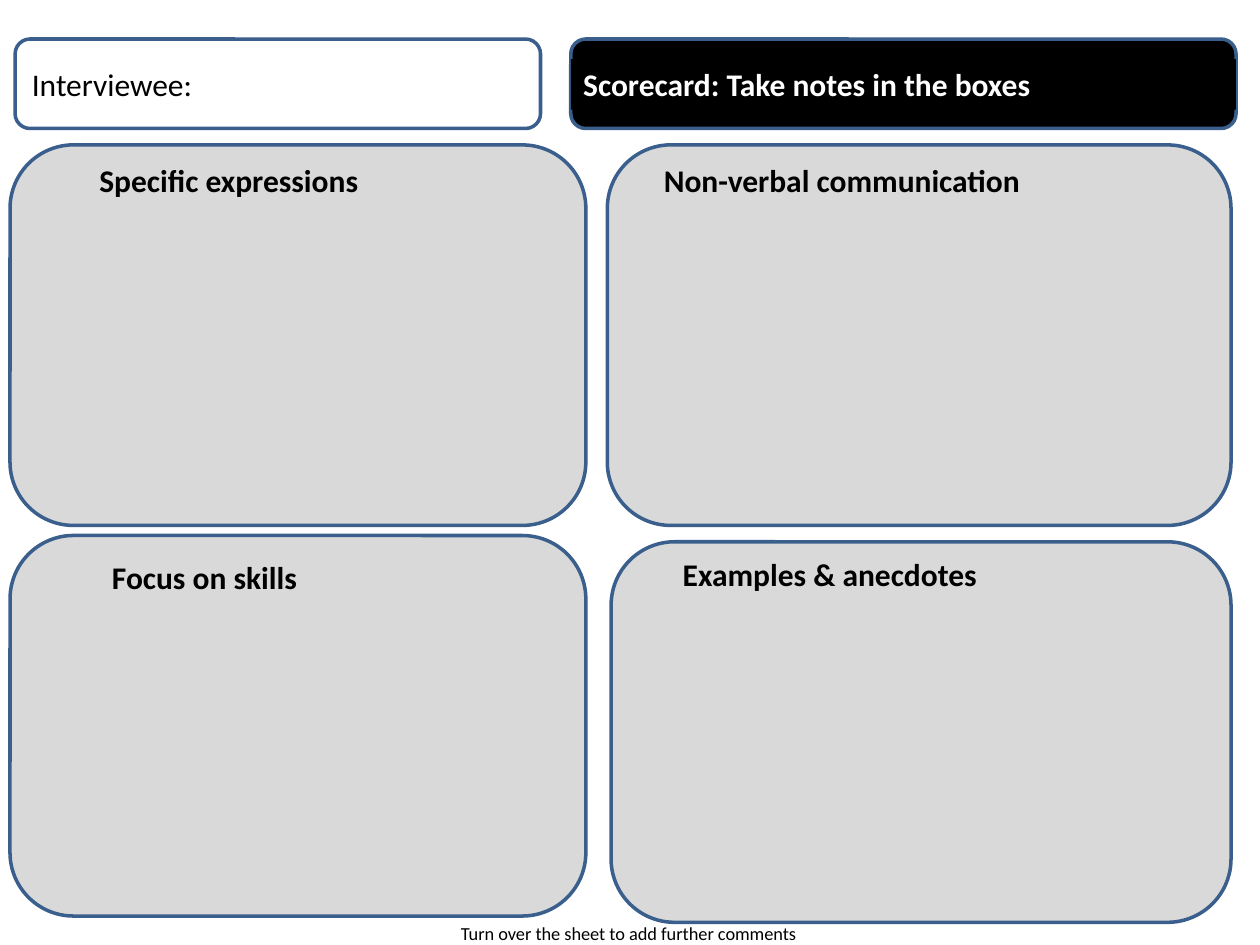
from dataclasses import dataclass

from pptx import Presentation
from pptx.dml.color import RGBColor
from pptx.enum.shapes import MSO_SHAPE
from pptx.enum.text import MSO_ANCHOR, PP_ALIGN
from pptx.util import Inches, Pt


@dataclass(frozen=True)
class Theme:
    """Colours, font and sizes of the scorecard."""
    font: str = "Calibri"
    ink: str = "000000"
    paper: str = "FFFFFF"
    panel: str = "D9D9D9"
    border: str = "3A5F8C"
    border_width: float = 2
    heading_size: float = 18
    footer_size: float = 10.5


THEME = Theme()

PANELS = (
    ("Specific expressions", (0.08, 1.15, 4.57, 3.02), (0.69, 1.23)),
    ("Focus on skills", (0.08, 4.25, 4.57, 3.02), (0.79, 4.38)),
    ("Non-verbal communication", (4.82, 1.15, 4.95, 3.02), (5.17, 1.23)),
    ("Examples & anecdotes", (4.85, 4.3, 4.92, 3.02), (5.32, 4.36)),
)


def write(holder, text, *, size=THEME.heading_size, color=THEME.ink, bold=False,
          anchor=MSO_ANCHOR.TOP):
    """Put left-aligned, formatted text into a shape or text box."""
    frame = holder.text_frame
    frame.word_wrap = True
    frame.vertical_anchor = anchor
    paragraph = frame.paragraphs[0]
    paragraph.alignment = PP_ALIGN.LEFT
    run = paragraph.add_run()
    run.text = text
    run.font.name = THEME.font
    run.font.size = Pt(size)
    run.font.bold = bold
    run.font.color.rgb = RGBColor.from_string(color)


def add_box(slide, bounds, *, fill=None, border=THEME.border,
            kind=MSO_SHAPE.ROUNDED_RECTANGLE):
    """Add a box with an optional fill and border."""
    box = slide.shapes.add_shape(kind, *map(Inches, bounds))
    box.shadow.inherit = False
    if fill:
        box.fill.solid()
        box.fill.fore_color.rgb = RGBColor.from_string(fill)
    else:
        box.fill.background()
    if border:
        box.line.color.rgb = RGBColor.from_string(border)
        box.line.width = Pt(THEME.border_width)
    else:
        box.line.fill.background()
    return box


def add_label(slide, bounds, text, **text_format):
    """Add a text box holding one line of text."""
    label = slide.shapes.add_textbox(*map(Inches, bounds))
    write(label, text, **text_format)


def main():
    """Build the interview scorecard."""
    deck = Presentation()
    deck.slide_width, deck.slide_height = Inches(10), Inches(7.5)
    slide = deck.slides.add_slide(deck.slide_layouts[6])

    interviewee = add_box(slide, (0.12, 0.31, 4.17, 0.71))
    write(interviewee, "Interviewee:", anchor=MSO_ANCHOR.MIDDLE)

    for _, bounds, _ in PANELS:
        add_box(slide, bounds, fill=THEME.panel)

    add_box(slide, (4.53, 0.31, 5.28, 0.71), fill=THEME.ink)
    title = add_box(slide, (4.53, 0.47, 5.28, 0.4), fill=THEME.ink, border=None,
                    kind=MSO_SHAPE.RECTANGLE)
    write(title, "Scorecard: Take notes in the boxes", color=THEME.paper, bold=True)

    for heading, _, corner in PANELS:
        add_label(slide, (*corner, 3.22, 0.4), heading, bold=True)

    add_label(slide, (3.56, 7.27, 5.51, 0.29),
              "Turn over the sheet to add further comments", size=THEME.footer_size)
    deck.save("out.pptx")


if __name__ == "__main__":
    main()
